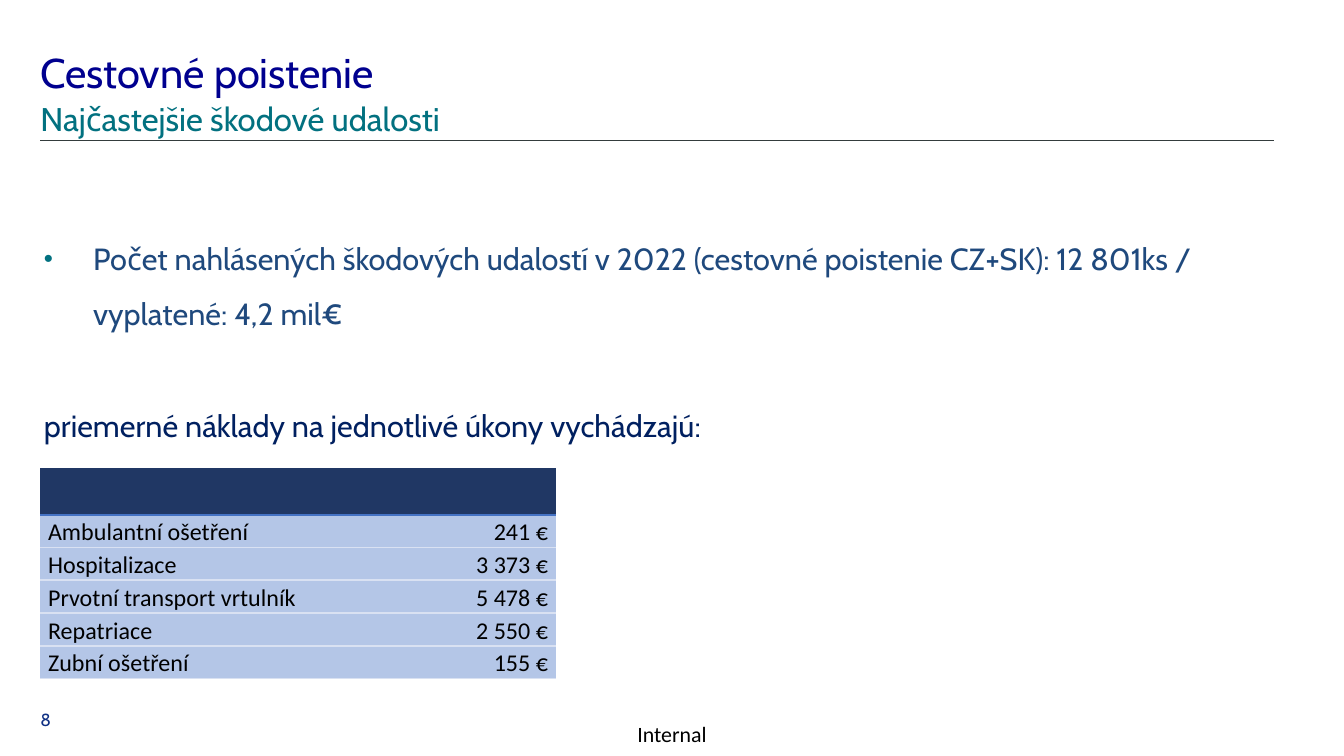
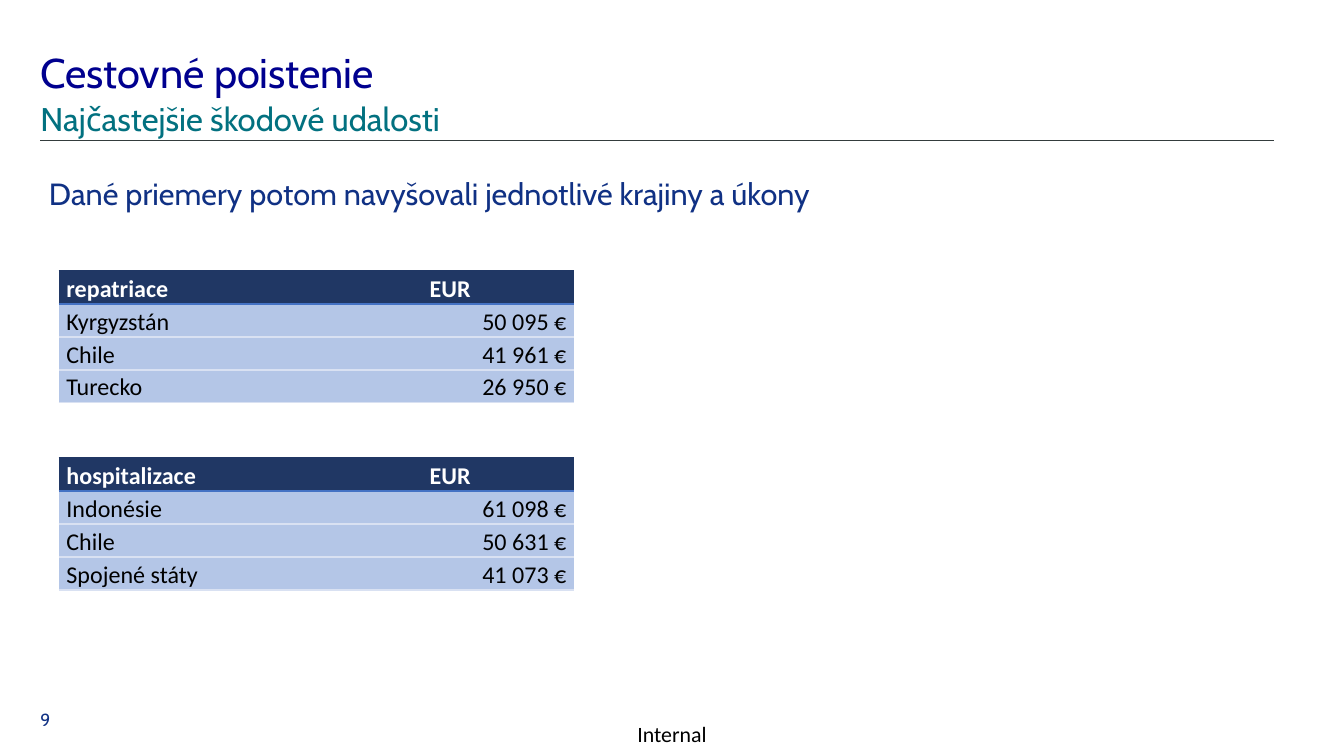
from lxml import etree
from pptx import Presentation, util as u
from pptx.dml.color import RGBColor
from pptx.enum import shapes, text
from pptx.oxml import ns

Pt = u.Pt
NAVY, PALE, RULE, BLUE = "203764", "B4C6E7", "D9E1F2", "4472C4"
TEAL, INK = "027180", "103184"
LEFT, RIGHT = text.PP_ALIGN.LEFT, text.PP_ALIGN.RIGHT


def write(p, t, size=14, color=INK, font="Cabin", bold=False, align=LEFT):
    p.alignment = align
    if not t:
        etree.SubElement(p._p, ns.qn("a:endParaRPr"), sz=str(size * 100))
        return
    r = p.add_run()
    r.text = t
    r.font.size, r.font.name, r.font.bold = Pt(size), font, bold
    r.font.color.rgb = RGBColor.from_string(color)


def add_box(s, x, y, w, h, inset=(0, 0), anchor=text.MSO_ANCHOR.TOP):
    tf = s.shapes.add_textbox(Pt(x), Pt(y), Pt(w), Pt(h)).text_frame
    tf.word_wrap = True
    tf.vertical_anchor = anchor
    tf.margin_left = tf.margin_right = Pt(inset[0])
    tf.margin_top = tf.margin_bottom = Pt(inset[1])
    return tf


prs = Presentation()
prs.slide_width, prs.slide_height = Pt(614.88), Pt(345.87)
middle = text.MSO_ANCHOR.MIDDLE

for number in (8, 9):
    s = prs.slides.add_slide(prs.slide_layouts[6])
    tf = add_box(s, 280.8, 325.4, 53.3, 20.9, anchor=middle)
    write(tf.paragraphs[0], "Internal", size=10, color="000000", font="Calibri",
          align=text.PP_ALIGN.CENTER)
    tf = add_box(s, 18.5, 21.6, 578, 22.3)
    write(tf.paragraphs[0], "Cestovné poistenie", size=19, color="00008F")
    tf = add_box(s, 18.5, 45.4, 578, 17.3)
    write(tf.paragraphs[0], "Najčastejšie škodové udalosti", size=15, color=TEAL)
    tf = add_box(s, 18.5, 323.3, 17.3, 11.5, anchor=middle)
    write(tf.paragraphs[0], str(number), size=8)
    ln = s.shapes.add_connector(shapes.MSO_CONNECTOR.STRAIGHT,
                                Pt(18.5), Pt(64.2), Pt(583), Pt(64.2))
    ln.line.color.rgb = RGBColor.from_string("343C3D")
    ln.line.width = Pt(0.5)
    etree.SubElement(ln._element.spPr, ns.qn("a:effectLst"))

costs, countries = prs.slides

tf = add_box(costs, 13, 98, 575.3, 105, inset=(7.2, 3.6))
p = tf.paragraphs[0]
pPr = p._p.get_or_add_pPr()
pPr.set("marL", str(Pt(22.5)))
pPr.set("indent", str(-Pt(22.5)))
color = etree.SubElement(pPr, ns.qn("a:buClr"))
etree.SubElement(color, ns.qn("a:srgbClr"), val=TEAL)
etree.SubElement(pPr, ns.qn("a:buSzPct"), val="85000")
etree.SubElement(pPr, ns.qn("a:buFont"), typeface="Arial")
etree.SubElement(pPr, ns.qn("a:buChar"), char="•")
write(p, "Počet nahlásených škodových udalostí v 2022 (cestovné poistenie CZ+SK): "
      "12 801ks / vyplatené: 4,2 mil€", color="1F497D")
p.line_spacing = 1.5
p = tf.add_paragraph()
write(p, "priemerné náklady na jednotlivé úkony vychádzajú:", color="002060")
p.line_spacing = 1.5
p.space_before = Pt(26)

tf = add_box(countries, 15.3, 76.4, 575.3, 34.6, inset=(7.2, 3.6))
write(tf.paragraphs[0], "Dané priemery potom navyšovali jednotlivé krajiny a úkony")

tables = [
    (costs, 18.4, 214.5, 21, [
        ("", ""),
        ("Ambulantní ošetření", "241 €"),
        ("Hospitalizace", "3 373 €"),
        ("Prvotní transport vrtulník", "5 478 €"),
        ("Repatriace", "2 550 €"),
        ("Zubní ošetření", "155 €")]),
    (countries, 26.8, 124, 15.2, [
        ("repatriace", "EUR"),
        ("Kyrgyzstán", "50 095 €"),
        ("Chile", "41 961 €"),
        ("Turecko", "26 950 €")]),
    (countries, 26.8, 209.6, 15.2, [
        ("hospitalizace", "EUR"),
        ("Indonésie", "61 098 €"),
        ("Chile", "50 631 €"),
        ("Spojené státy", "41 073 €")]),
]
widths = (166.2, 69.8)
row_h = 15

for s, x, y, head_h, rows in tables:
    height = head_h + row_h * (len(rows) - 1)
    tbl = s.shapes.add_table(len(rows), 2, Pt(x), Pt(y), Pt(sum(widths)), Pt(height)).table
    tbl.horz_banding = False
    for col, w in zip(tbl.columns, widths):
        col.width = Pt(w)
    for i, row in enumerate(rows):
        head = i == 0
        tbl.rows[i].height = Pt(head_h if head else row_h)
        top = NAVY if head else BLUE if i == 1 else RULE
        bottom = BLUE if head else RULE
        for j, t in enumerate(row):
            cell = tbl.cell(i, j)
            cell.margin_left = cell.margin_right = Pt(3.6)
            cell.margin_top = cell.margin_bottom = 0
            cell.vertical_anchor = text.MSO_ANCHOR.BOTTOM
            tcPr = cell._tc.get_or_add_tcPr()
            for side, c in (("L", None), ("R", None), ("T", top), ("B", bottom)):
                edge = etree.SubElement(tcPr, ns.qn("a:ln" + side), w=str(Pt(1)))
                if c:
                    fill = etree.SubElement(edge, ns.qn("a:solidFill"))
                    etree.SubElement(fill, ns.qn("a:srgbClr"), val=c)
                else:
                    etree.SubElement(edge, ns.qn("a:noFill"))
            cell.fill.solid()
            cell.fill.fore_color.rgb = RGBColor.from_string(NAVY if head else PALE)
            write(cell.text_frame.paragraphs[0], t, size=11, font="Calibri", bold=head,
                  color="FFFFFF" if head else "000000",
                  align=RIGHT if j and not head else LEFT)

prs.save("out.pptx")
